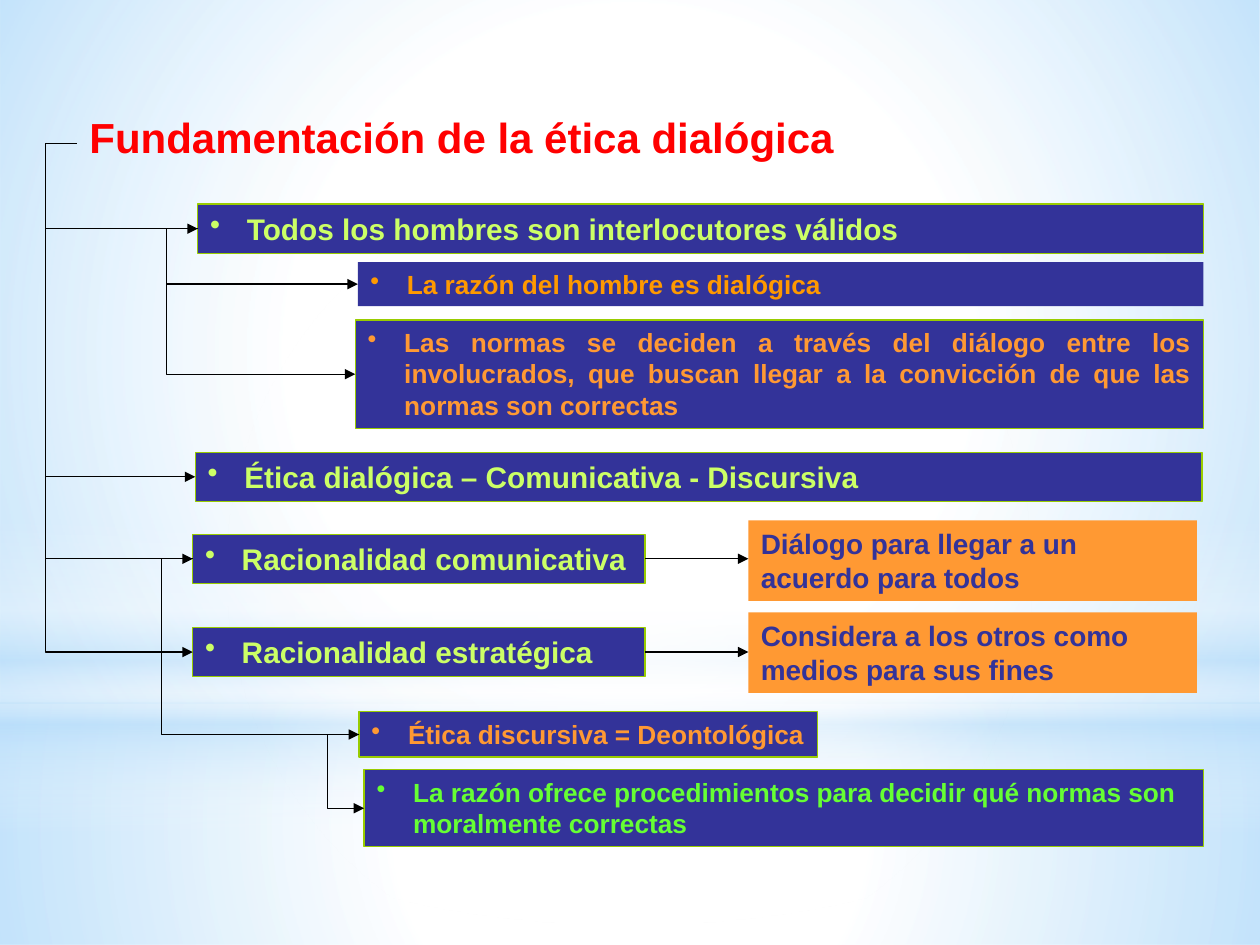
from lxml import etree
from pptx import Presentation
from pptx.dml.color import RGBColor
from pptx.enum.shapes import MSO_CONNECTOR as Link, MSO_SHAPE as Shape
from pptx.enum.text import MSO_ANCHOR as Anchor, MSO_AUTO_SIZE as AutoSize, PP_ALIGN as Align
from pptx.oxml import parse_xml
from pptx.oxml.ns import nsdecls, qn
from pptx.util import Inches, Pt

# Content
TITLE = "Fundamentación de la ética dialógica"
NAVY, ORANGE, GREEN, LIME = "333399", "FF9933", "99CC00", "CCFF66"

# key: (text, (left, top, width, height), size, text colour, border)
IDEAS = {
    "hombres": ("Todos los hombres son interlocutores válidos",
                (1.57, 1.62, 7.98, 0.39), 17, LIME, GREEN),
    "razon": ("La razón del hombre es dialógica",
              (2.84, 2.08, 6.71, 0.35), 15, "FF9900", None),
    "normas": ("Las normas se deciden a través del diálogo entre los involucrados, "
               "que buscan llegar a la convicción de que las normas son correctas",
               (2.82, 2.54, 6.73, 0.86), 15, ORANGE, GREEN),
    "etica": ("Ética dialógica – Comunicativa - Discursiva",
              (1.55, 3.59, 7.99, 0.39), 17, LIME, GREEN),
    "comunicativa": ("Racionalidad comunicativa",
                     (1.53, 4.24, 3.59, 0.39), 17, LIME, GREEN),
    "estrategica": ("Racionalidad estratégica",
                    (1.53, 4.98, 3.59, 0.39), 17, LIME, GREEN),
    "discursiva": ("Ética discursiva = Deontológica",
                   (2.85, 5.65, 3.64, 0.36), 15, ORANGE, GREEN),
    "procedimientos": ("La razón ofrece procedimientos para decidir qué normas son "
                       "moralmente correctas",
                       (2.89, 6.11, 6.66, 0.61), 15, "66FF33", GREEN),
}
JUSTIFIED = {"normas"}
MEANINGS = {
    "comunicativa": ("Diálogo para llegar a un acuerdo para todos", (5.94, 4.13, 3.56, 0.64)),
    "estrategica": ("Considera a los otros como medios para sus fines", (5.94, 4.86, 3.56, 0.64)),
}
BRANCHES = {
    "title": ["hombres", "etica", "comunicativa", "estrategica"],
    "hombres": ["razon", "normas"],
    "comunicativa": ["discursiva"],
    "discursiva": ["procedimientos"],
}
ELBOW_OUT = 0.25  # how far a branch runs left of its parent

# Backdrop: shape, place, gradient stops (position %, colour, opacity %), direction
RADIAL = ('<a:path path="circle"><a:fillToRect l="50000" t="50000" r="50000" b="50000"/>'
          '</a:path>')
DOWNWARD = '<a:lin ang="5400000" scaled="0"/>'
SKY = "B4DCFA"
BACKDROP = [
    (Shape.RECTANGLE, (0, 5.58, 10, 1.92),
     [(0, "FFFFFF", 91), (37, "FFFFFF", 76), (100, SKY, 79)], RADIAL),
    (Shape.RECTANGLE, (0, 0, 10, 5.58),
     [(0, "FFFFFF", 89), (48, "FFFFFF", 62), (100, SKY, 79)], RADIAL),
    (Shape.RECTANGLE, (0, 4.12, 10, 2.5),
     [(0, "FFFFFF", 0), (29, "FFFFFF", 30), (45, SKY, 40), (55, "FFFFFF", 26),
      (65, SKY, 60), (100, "FFFFFF", 0)], DOWNWARD),
    (Shape.OVAL, (0, 1.75, 10, 5.58),
     [(0, "FFFFFF", 100), (56, "FFFFFF", 0)], RADIAL),
]


def color(hex_value):
    return RGBColor.from_string(hex_value)


def add_panel(kind, place):
    panel = slide.shapes.add_shape(kind, *map(Inches, place))
    panel.shadow.inherit = False
    panel.line.fill.background()
    return panel


def write(shape, text, size, hex_value, align=Align.LEFT):
    frame = shape.text_frame
    frame.word_wrap = True
    frame.auto_size = AutoSize.NONE
    frame.vertical_anchor = Anchor.TOP
    frame.text = text
    paragraph = frame.paragraphs[0]
    paragraph.alignment = align
    paragraph.space_before = Pt(0)
    font = paragraph.font
    font.name, font.size, font.bold = "Arial", Pt(size), True
    font.color.rgb = color(hex_value)
    return paragraph


def add_bullet(paragraph):
    props = paragraph._p.get_or_add_pPr()
    props.set("marL", str(Inches(0.29)))
    props.set("indent", str(-Inches(0.29)))
    bullet = parse_xml(f'<a:buChar {nsdecls("a")} char="•"/>')
    props.find(qn("a:defRPr")).addprevious(bullet)


def add_box(text, place, size, hex_value, fill, border=None, align=Align.LEFT):
    box = add_panel(Shape.RECTANGLE, place)
    box.fill.solid()
    box.fill.fore_color.rgb = color(fill)
    if border:
        box.line.color.rgb = color(border)
        box.line.width = Pt(0.75)
    return write(box, text, size, hex_value, align)


def add_arrow(kind, start, end):
    arrow = slide.shapes.add_connector(kind, *map(Inches, start + end))
    arrow.line.color.rgb = color("000000")
    arrow.line.width = Pt(0.75)
    etree.SubElement(arrow.line._get_or_add_ln(), qn("a:tailEnd"), type="triangle")
    etree.SubElement(arrow._element.spPr, qn("a:effectLst"))
    return arrow


def left_middle(place):
    left, top, _, height = place
    return left, top + height / 2


presentation = Presentation()
presentation.slide_width, presentation.slide_height = Inches(10), Inches(7.5)
slide = presentation.slides.add_slide(presentation.slide_layouts[5])

# Backdrop
for kind, place, stops, direction in BACKDROP:
    glow = add_panel(kind, place)
    stop_xml = "".join(
        f'<a:gs pos="{position * 1000}"><a:srgbClr val="{tint}">'
        f'<a:alpha val="{opacity * 1000}"/></a:srgbClr></a:gs>'
        for position, tint, opacity in stops)
    glow._element.spPr.find(qn("a:prstGeom")).addnext(parse_xml(
        f'<a:gradFill {nsdecls("a")} rotWithShape="1"><a:gsLst>{stop_xml}</a:gsLst>'
        f'{direction}</a:gradFill>'))

# Title, brought in front of the backdrop
title = slide.shapes.title
title_place = (0.61, 0.91, 7.38, 0.46)
title.left, title.top, title.width, title.height = map(Inches, title_place)
write(title, TITLE, 24, "FF0000").line_spacing = 0.8
slide.shapes._spTree.append(title._element)

# Ideas and their meanings
for key, (text, place, size, tint, border) in IDEAS.items():
    align = Align.JUSTIFY if key in JUSTIFIED else Align.LEFT
    add_bullet(add_box(text, place, size, tint, NAVY, border, align))
for text, place in MEANINGS.values():
    add_box(text, place, 16, NAVY, ORANGE)

# Branches leave the parent's left edge and turn in to each child
anchors = {key: left_middle(idea[1]) for key, idea in IDEAS.items()}
anchors["title"] = left_middle(title_place)
for parent, children in BRANCHES.items():
    for child in children:
        start, end = anchors[parent], anchors[child]
        branch = add_arrow(Link.ELBOW, start, end)
        turn = round(-ELBOW_OUT / (end[0] - start[0]) * 100000)
        guides = branch._element.spPr.find(qn("a:prstGeom")).get_or_add_avLst()
        etree.SubElement(guides, qn("a:gd"), name="adj1", fmla=f"val {turn}")

# Straight arrows from each rationality to its meaning
for key, (_, place) in MEANINGS.items():
    left, _, width, _ = IDEAS[key][1]
    middle = anchors[key][1]
    add_arrow(Link.STRAIGHT, (left + width, middle), (place[0], middle))

presentation.save("out.pptx")
